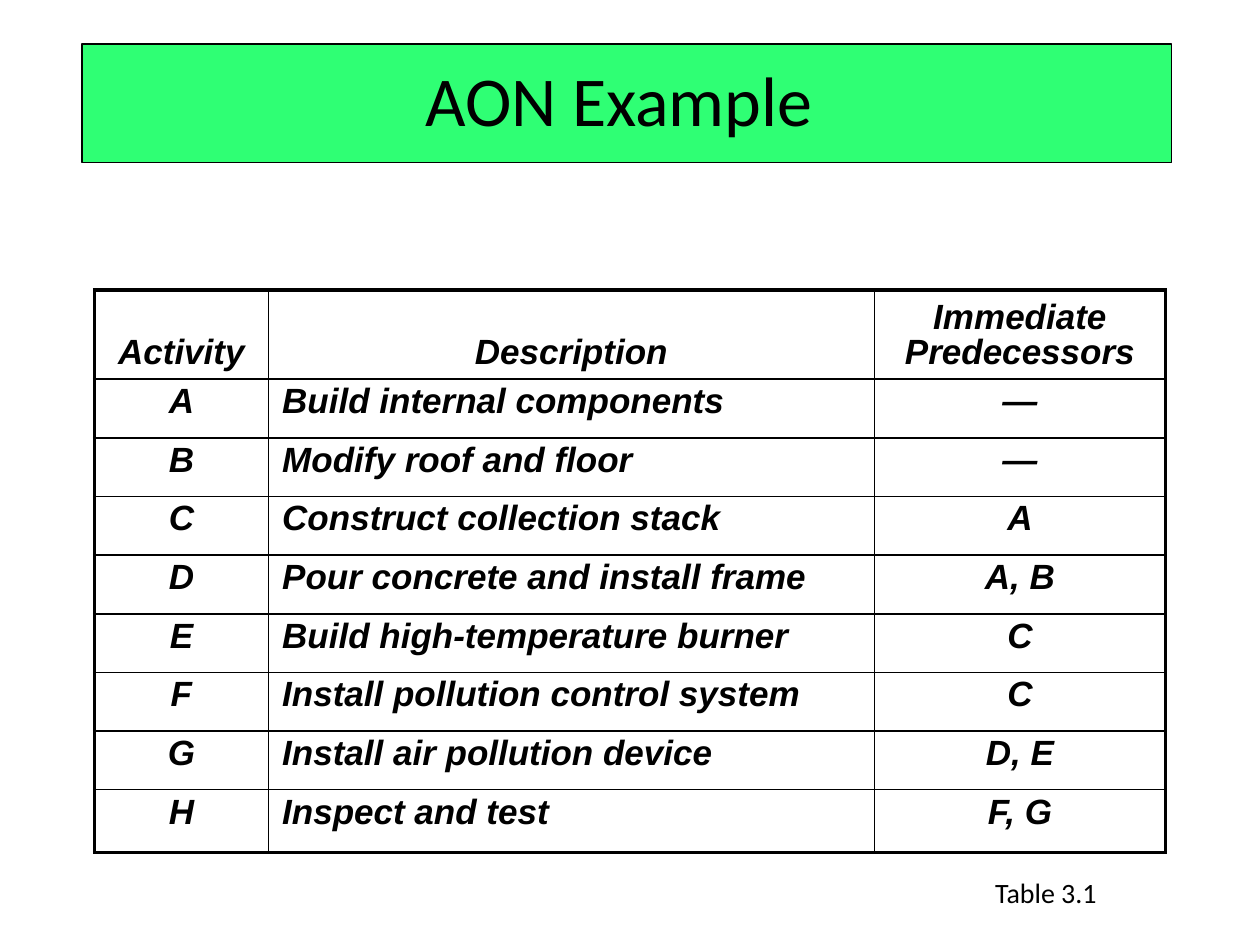
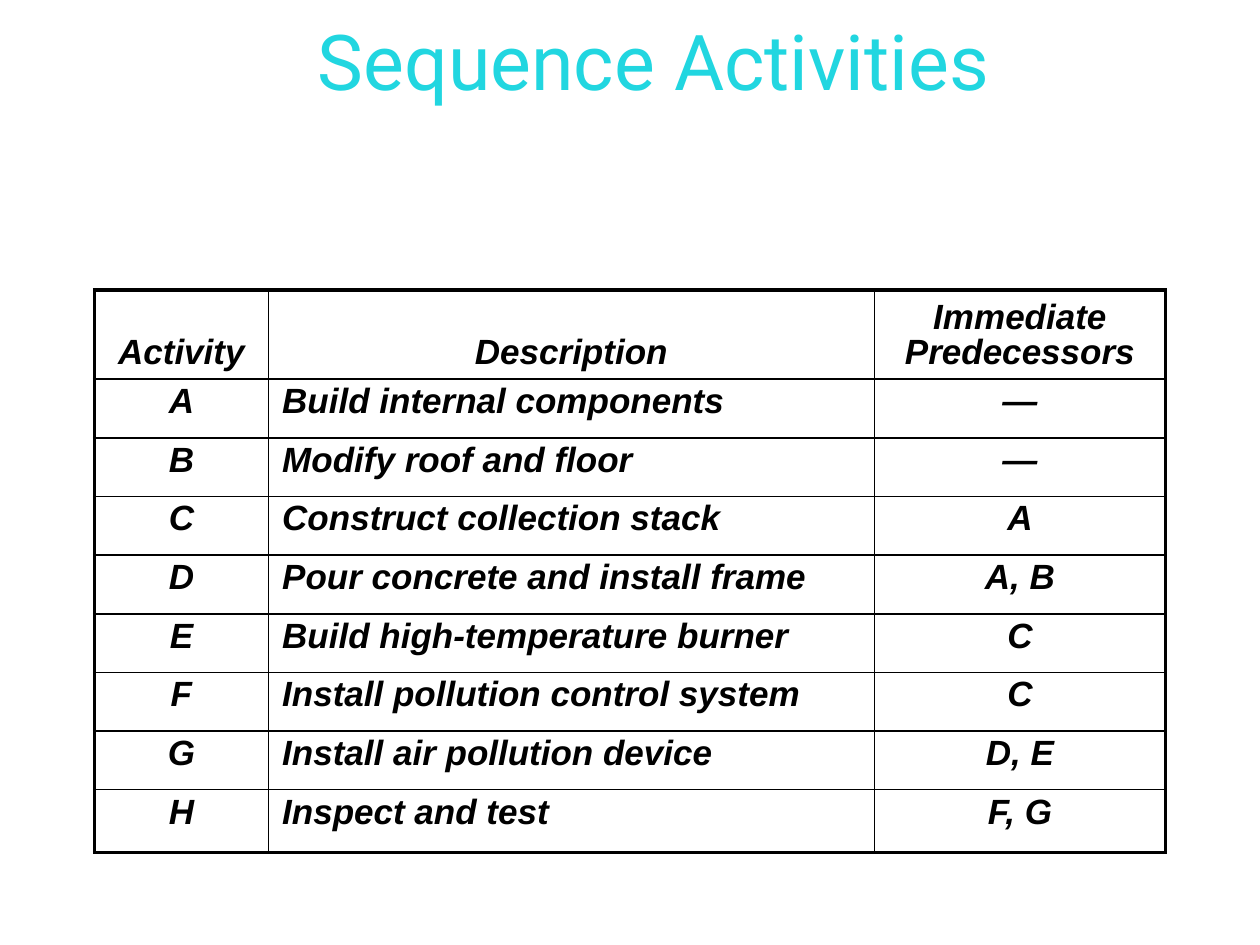
from lxml import etree
from pptx import Presentation
from pptx.dml.color import RGBColor
from pptx.enum.text import MSO_ANCHOR, MSO_AUTO_SIZE, PP_ALIGN
from pptx.oxml.ns import qn
from pptx.util import Inches, Pt

CENTER, LEFT = PP_ALIGN.CENTER, PP_ALIGN.LEFT
TOP, MIDDLE, BOTTOM = MSO_ANCHOR.TOP, MSO_ANCHOR.MIDDLE, MSO_ANCHOR.BOTTOM
NO_AUTOFIT, GROW = MSO_AUTO_SIZE.NONE, MSO_AUTO_SIZE.SHAPE_TO_FIT_TEXT
TITLE_ONLY = 5

COLORS = {"black": "000000", "band": "2FFF74"}
TITLE_GRADIENT = {0: "03D4A8", 25: "21D6E0", 75: "0087E6", 100: "005CBF"}

TABLE_BOX = (0.75, 2.3, 8.5, 4.47)
COLUMN_WIDTHS = (1.38, 4.81, 2.31)
HEADER_HEIGHT, LAST_HEIGHT = 0.71, 0.5
OUTER_LINE, INNER_LINE = 2.25, 1

ACTIVITIES = [
    ("Activity", "Description", "Immediate Predecessors"),
    ("A", "Build internal components", "—"),
    ("B", "Modify roof and floor", "—"),
    ("C", "Construct collection stack", "A"),
    ("D", "Pour concrete and install frame", "A, B"),
    ("E", "Build high-temperature burner", "C"),
    ("F", "Install pollution control system", "C"),
    ("G", "Install air pollution device", "D, E"),
    ("H", "Inspect and test", "F, G"),
]


def rgb(name):
    return RGBColor.from_string(COLORS[name])


def set_font(paragraph, face, size, bold=False, italic=False):
    font = paragraph.font
    font.name, font.size = face, Pt(size)
    font.bold, font.italic = bold, italic
    font.color.rgb = rgb("black")


def place_title(slide, box, text, face, size):
    title = slide.shapes.title
    title.left, title.top, title.width, title.height = map(Inches, box)
    frame = title.text_frame
    frame.text = text
    frame.word_wrap = True
    frame.auto_size = NO_AUTOFIT
    frame.vertical_anchor = MIDDLE
    heading = frame.paragraphs[0]
    heading.alignment = CENTER
    set_font(heading, face, size)
    return title


def fill_with_gradient(run, stops, angle):
    fill = run.font.fill
    fill.gradient()
    fill.gradient_angle = angle
    stop_list = run.font.fill._xPr.find(qn("a:gradFill")).find(qn("a:gsLst"))
    for old_stop in list(stop_list):
        stop_list.remove(old_stop)
    for percent, color in stops.items():
        stop = etree.SubElement(stop_list, qn("a:gs"), pos=str(percent * 1000))
        etree.SubElement(stop, qn("a:srgbClr"), val=color)


def set_space_before(paragraph, percent):
    """Set spacing as a share of the line, which python-pptx has no setter for."""
    paragraph.space_before = Pt(0)
    spacing = paragraph._p.pPr.find(qn("a:spcBef"))
    spacing.remove(spacing[0])
    etree.SubElement(spacing, qn("a:spcPct"), val=str(percent * 1000))


def draw_borders(cell, widths):
    """Draw the left, right, top and bottom borders, in that order."""
    properties = cell._tc.get_or_add_tcPr()
    for side, width in zip("LRTB", widths):
        line = etree.SubElement(properties, qn(f"a:ln{side}"), w=str(Pt(width)))
        color = etree.SubElement(line, qn("a:solidFill"))
        etree.SubElement(color, qn("a:srgbClr"), val=COLORS["black"])


def format_cell(cell, text, is_header, alignment):
    cell.text = text
    cell.vertical_anchor = BOTTOM if is_header else TOP
    cell.margin_left = cell.margin_right = Inches(0.11)
    cell.margin_top = cell.margin_bottom = Inches(0.06 if is_header else 0.05)
    entry = cell.text_frame.paragraphs[0]
    entry.alignment = alignment
    entry.line_spacing = 0.9
    set_space_before(entry, 40)
    set_font(entry, "Arial", 20, bold=True, italic=True)


def add_activity_table(slide, box):
    row_count, column_count = len(ACTIVITIES), len(COLUMN_WIDTHS)
    last_row, last_column = row_count - 1, column_count - 1
    table = slide.shapes.add_table(row_count, column_count, *map(Inches, box)).table
    table.first_row = table.horz_banding = False

    for column, width in zip(table.columns, COLUMN_WIDTHS):
        column.width = Inches(width)
    body_height = (box[3] - HEADER_HEIGHT - LAST_HEIGHT) / (row_count - 2)
    heights = [HEADER_HEIGHT] + [body_height] * (row_count - 2) + [LAST_HEIGHT]
    for row, height in zip(table.rows, heights):
        row.height = Inches(height)

    for r, activity in enumerate(ACTIVITIES):
        for c, text in enumerate(activity):
            cell = table.cell(r, c)
            is_header = r == 0
            alignment = LEFT if c == 1 and not is_header else CENTER
            format_cell(cell, text, is_header, alignment)
            on_edge = (c == 0, c == last_column, is_header, r == last_row)
            draw_borders(cell, [OUTER_LINE if edge else INNER_LINE for edge in on_edge])
            cell.fill.background()


def add_table_number(slide, box, text):
    caption = slide.shapes.add_textbox(*map(Inches, box)).text_frame
    caption.word_wrap = False
    caption.auto_size = GROW
    caption.text = text
    set_font(caption.paragraphs[0], "Calibri", 16)


def build_aon_example(slide):
    title = place_title(slide, (0.65, 0.35, 8.65, 0.94), "AON Example ", "Calibri", 40)
    title.text_frame.paragraphs[0].line_spacing = 0.9
    title.fill.solid()
    title.fill.fore_color.rgb = rgb("band")
    title.line.color.rgb = rgb("black")
    title.line.width = Pt(0.75)
    add_activity_table(slide, TABLE_BOX)
    add_table_number(slide, (7.8, 6.9, 1.15, 0.37), "Table 3.1")


def build_sequence_activities(slide):
    title = place_title(slide, (1.56, 0.05, 7.26, 0.84), "Sequence Activities", "Roboto", 44)
    fill_with_gradient(title.text_frame.paragraphs[0].runs[0], TITLE_GRADIENT, 90)
    add_activity_table(slide, TABLE_BOX)


def main():
    deck = Presentation()
    deck.slide_width, deck.slide_height = Inches(10), Inches(7.5)
    for build in (build_aon_example, build_sequence_activities):
        build(deck.slides.add_slide(deck.slide_layouts[TITLE_ONLY]))
    deck.save("out.pptx")


if __name__ == "__main__":
    main()
